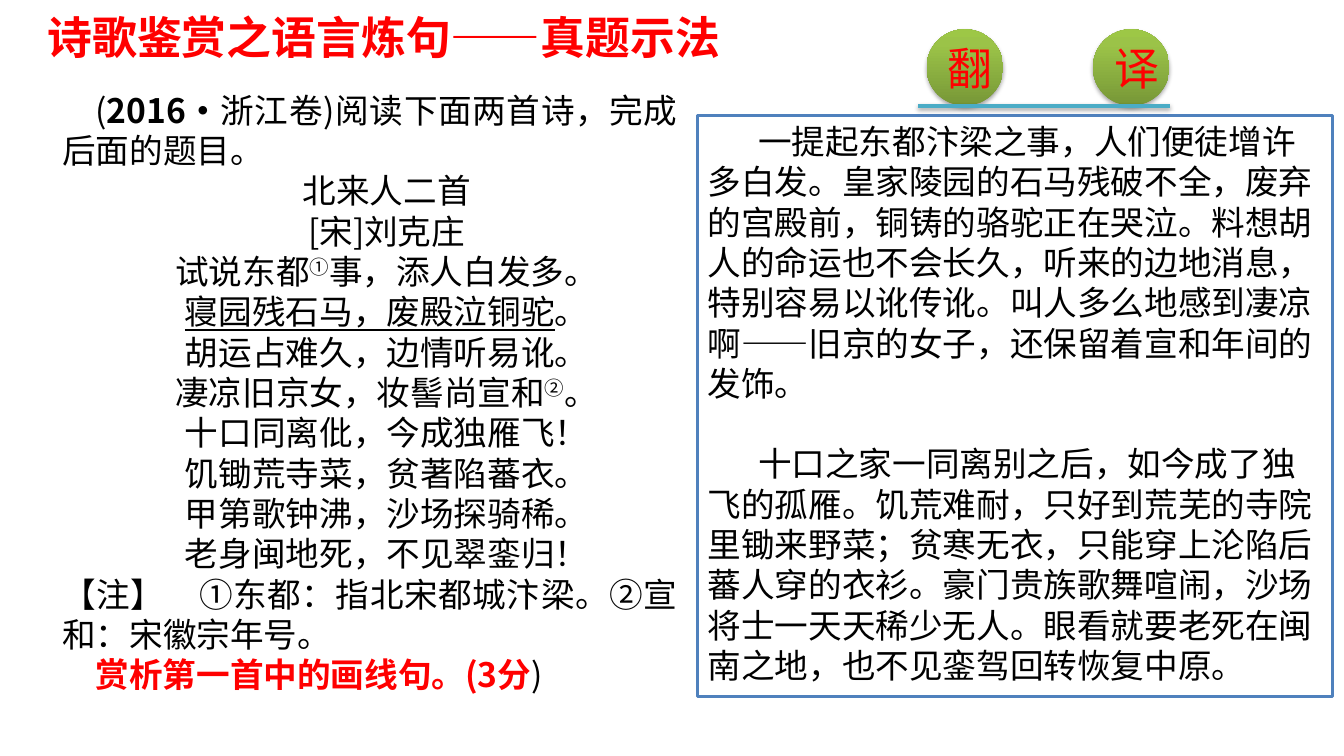
import copy

import lxml.etree
import pptx
import pptx.dml.color
import pptx.enum.shapes
import pptx.enum.text
import pptx.oxml.ns
import pptx.util

RED = pptx.dml.color.RGBColor(0xFF, 0x00, 0x00)
BLACK = pptx.dml.color.RGBColor(0x00, 0x00, 0x00)
WHITE = pptx.dml.color.RGBColor(0xFF, 0xFF, 0xFF)
BLUE = pptx.dml.color.RGBColor(0x4F, 0x81, 0xBD)
TEAL = pptx.dml.color.RGBColor(0x4B, 0xAC, 0xC6)
GREENS = [
    (0, pptx.dml.color.RGBColor(0x77, 0x97, 0x37)),
    (0.8, pptx.dml.color.RGBColor(0x9B, 0xC3, 0x48)),
    (1, pptx.dml.color.RGBColor(0x9D, 0xC7, 0x46)),
]
ALIGN = pptx.enum.text.PP_ALIGN
ANCHOR = pptx.enum.text.MSO_ANCHOR
SHAPE = pptx.enum.shapes.MSO_SHAPE
qn = pptx.oxml.ns.qn


class SlideBuilder:
    font_name = "Noto Sans CJK SC"
    body_size = 24
    heading_size = 32
    line_ratio = 1.2

    def __init__(self, presentation):
        self.width = presentation.slide_width
        self.height = presentation.slide_height
        self.slide = presentation.slides.add_slide(presentation.slide_layouts[5])

    def across(self, percent):
        return round(self.width * percent / 100)

    def down(self, percent):
        return round(self.height * percent / 100)

    def box(self, left, top, width, height):
        return self.across(left), self.down(top), self.across(width), self.down(height)

    def format_run(self, run, size, color=BLACK, bold=False, underline=None, raised=False):
        run.font.size = pptx.util.Pt(size)
        run.font.name = self.font_name
        run.font.color.rgb = color
        run.font.bold = bold
        run.font.underline = underline
        properties = run._r.get_or_add_rPr()
        lxml.etree.SubElement(properties, qn("a:ea"), typeface=self.font_name)
        if raised:
            properties.set("baseline", "30000")

    def fill_paragraph(self, paragraph, segments, size, align, indent=0):
        paragraph.alignment = align
        paragraph.line_spacing = pptx.util.Pt(size * self.line_ratio)
        properties = paragraph._p.get_or_add_pPr()
        properties.set("marL", "0")
        properties.set("indent", str(pptx.util.Inches(indent)))
        for text, style in segments:
            run = paragraph.add_run()
            run.text = text
            self.format_run(run, size, **style)

    def fill_frame(self, text_frame, rows):
        text_frame.word_wrap = True
        text_frame.auto_size = pptx.enum.text.MSO_AUTO_SIZE.SHAPE_TO_FIT_TEXT
        text_frame.vertical_anchor = ANCHOR.TOP
        for index, (segments, align, indent) in enumerate(rows):
            paragraph = text_frame.add_paragraph() if index else text_frame.paragraphs[0]
            self.fill_paragraph(paragraph, segments, self.body_size, align, indent)

    def cast_shadow(self, effects):
        shadow = lxml.etree.SubElement(
            effects, qn("a:outerShdw"), blurRad="40000", dist="23000", dir="5400000", rotWithShape="0"
        )
        color = lxml.etree.SubElement(shadow, qn("a:srgbClr"), val=str(BLACK))
        lxml.etree.SubElement(color, qn("a:alpha"), val="35000")

    def title(self, text, *place):
        shape = self.slide.shapes.title
        shape.left, shape.top, shape.width, shape.height = self.box(*place)
        shape.text_frame.vertical_anchor = ANCHOR.TOP
        shape.text_frame.auto_size = pptx.enum.text.MSO_AUTO_SIZE.SHAPE_TO_FIT_TEXT
        segments = [(text, {"color": RED, "bold": True})]
        self.fill_paragraph(shape.text_frame.paragraphs[0], segments, self.heading_size, ALIGN.LEFT)

    def text(self, rows, *place):
        shape = self.slide.shapes.add_textbox(*self.box(*place))
        self.fill_frame(shape.text_frame, rows)

    def panel(self, rows, *place):
        shape = self.slide.shapes.add_shape(SHAPE.RECTANGLE, *self.box(*place))
        shape.shadow.inherit = False
        shape.fill.solid()
        shape.fill.fore_color.rgb = WHITE
        shape.line.color.rgb = BLUE
        shape.line.width = pptx.util.Pt(2)
        self.fill_frame(shape.text_frame, rows)
        for paragraph in shape.text_frame.paragraphs[1:]:
            paragraph.space_before = pptx.util.Pt(self.body_size * self.line_ratio)

    def badge(self, text, *place):
        shape = self.slide.shapes.add_shape(SHAPE.OVAL, *self.box(*place))
        shape.line.fill.background()
        shape.fill.gradient()
        shape.fill.gradient_angle = 90
        stops = shape._element.spPr.find(qn("a:gradFill")).find(qn("a:gsLst"))
        stops.append(copy.deepcopy(stops[-1]))
        for stop, (position, color) in zip(shape.fill.gradient_stops, GREENS):
            stop.position = position
            stop.color.rgb = color
        shape.shadow.inherit = False
        self.cast_shadow(shape._element.spPr.find(qn("a:effectLst")))
        shape.text_frame.vertical_anchor = ANCHOR.MIDDLE
        segments = [(text, {"color": RED})]
        self.fill_paragraph(shape.text_frame.paragraphs[0], segments, self.heading_size, ALIGN.CENTER)

    def rule(self, left, right, top):
        connector = self.slide.shapes.add_connector(
            pptx.enum.shapes.MSO_CONNECTOR.STRAIGHT,
            self.across(left), self.down(top), self.across(right), self.down(top),
        )
        connector.line.color.rgb = TEAL
        connector.line.width = pptx.util.Pt(3)
        self.cast_shadow(lxml.etree.SubElement(connector._element.spPr, qn("a:effectLst")))


POEM = [
    [("北来人二首", {})],
    [("[宋]刘克庄", {})],
    [("试说东都", {}), ("①", {"raised": True}), ("事，添人白发多。", {})],
    [("寝园残石马，废殿泣铜驼", {"underline": True}), ("。", {})],
    [("胡运占难久，边情听易讹。", {})],
    [("凄凉旧京女，妆髻尚宣和", {}), ("②", {"raised": True}), ("。", {})],
    [("十口同离仳，今成独雁飞！", {})],
    [("饥锄荒寺菜，贫著陷蕃衣。", {})],
    [("甲第歌钟沸，沙场探骑稀。", {})],
    [("老身闽地死，不见翠銮归！", {})],
]
INTRODUCTION = [("(", {}), ("2016·", {"bold": True}), ("浙江卷)阅读下面两首诗，完成后面的题目。", {})]
NOTE = [("【注】　①东都：指北宋都城汴梁。②宣和：宋徽宗年号。", {})]
QUESTION = [("赏析第一首中的画线句。(3分", {"color": RED, "bold": True}), (")", {})]
TRANSLATION = [
    "一提起东都汴梁之事，人们便徒增许多白发。皇家陵园的石马残破不全，废弃的宫殿前，"
    "铜铸的骆驼正在哭泣。料想胡人的命运也不会长久，听来的边地消息，特别容易以讹传讹。"
    "叫人多么地感到凄凉啊——旧京的女子，还保留着宣和年间的发饰。",
    "十口之家一同离别之后，如今成了独飞的孤雁。饥荒难耐，只好到荒芜的寺院里锄来野菜；"
    "贫寒无衣，只能穿上沦陷后蕃人穿的衣衫。豪门贵族歌舞喧闹，沙场将士一天天稀少无人。"
    "眼看就要老死在闽南之地，也不见銮驾回转恢复中原。",
]


def main():
    presentation = pptx.Presentation()
    presentation.slide_width = pptx.util.Inches(13.33)
    presentation.slide_height = pptx.util.Inches(7.5)
    builder = SlideBuilder(presentation)
    builder.title("诗歌鉴赏之语言炼句——真题示法", 2.78, 0.67, 63.24, 8.53)
    exercise = [(INTRODUCTION, ALIGN.JUSTIFY, 0.33)]
    exercise += [(line, ALIGN.CENTER, 0.33) for line in POEM]
    exercise += [(NOTE, ALIGN.JUSTIFY, 0), (QUESTION, ALIGN.JUSTIFY, 0.33)]
    builder.text(exercise, 3.9, 11.2, 47.26, 82.13)
    translation = [([(text, {})], ALIGN.LEFT, 0.5) for text in TRANSLATION]
    builder.panel(translation, 51.91, 15.33, 47.26, 76.8)
    for index, character in enumerate("翻译"):
        builder.badge(character, 68.94 + 12.38 * index, 3.87, 5.7, 10.13)
    builder.rule(68.34, 87.02, 14)
    presentation.save("out.pptx")


if __name__ == "__main__":
    main()
